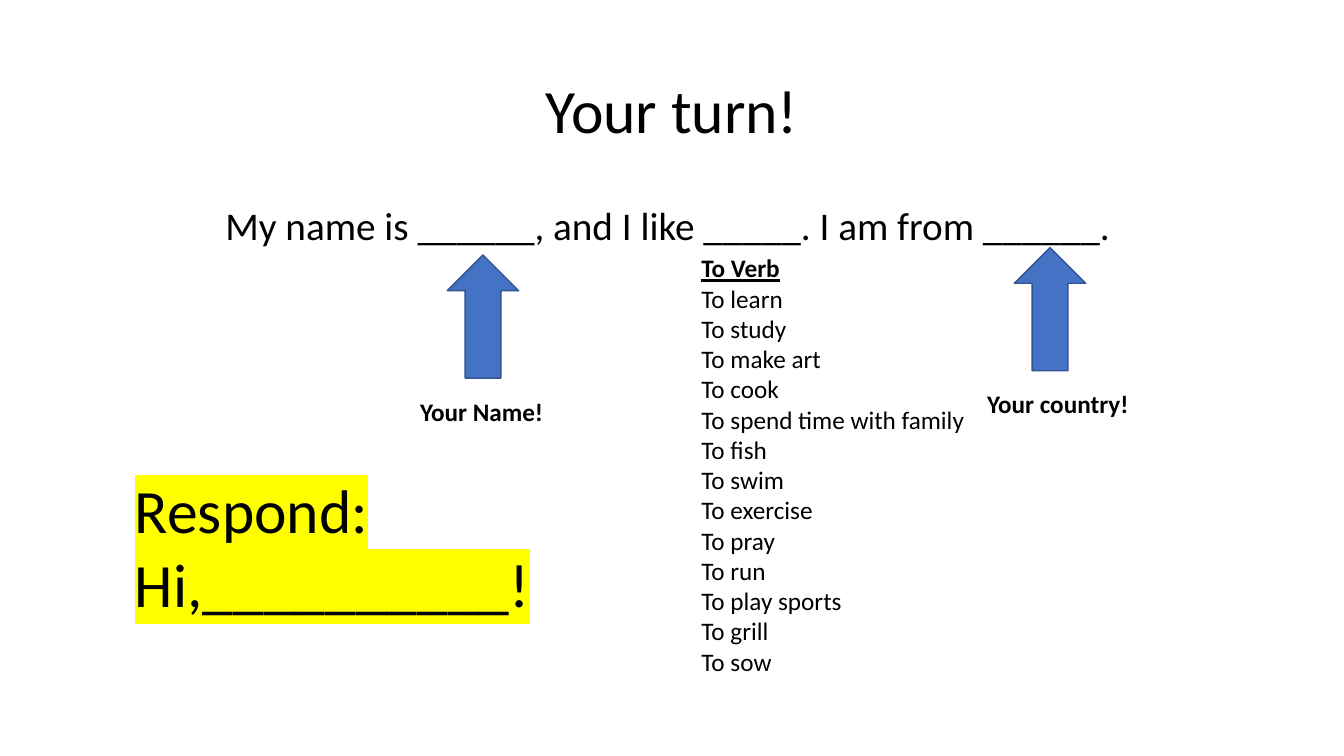
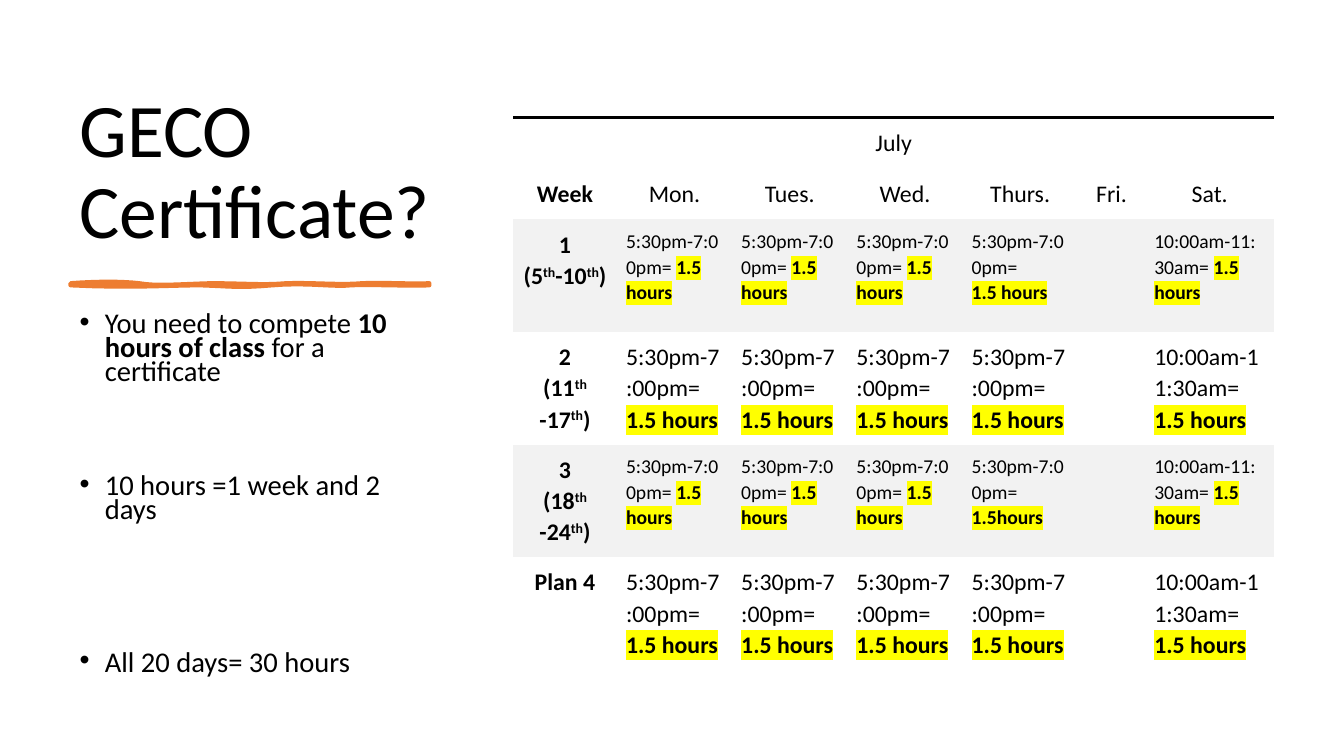
from lxml import etree
from pptx import Presentation
from pptx.dml.color import RGBColor
from pptx.enum import shapes, text
from pptx.oxml import ns
from pptx.util import Pt

COLORS = {"text": "000000", "mark": "FFFF00", "arrow": "4472C4",
          "arrow_edge": "325491", "stroke": "ED7D31", "band": "F2F2F2"}
FONT = "Calibri"
NO_GRID = "{2D5ABB26-0587-4C30-8999-92F81FD0307C}"
LEFT, CENTER = text.PP_ALIGN.LEFT, text.PP_ALIGN.CENTER
TOP, MIDDLE, BOTTOM = text.MSO_ANCHOR.TOP, text.MSO_ANCHOR.MIDDLE, text.MSO_ANCHOR.BOTTOM


def rgb(name):
    return RGBColor.from_string(COLORS[name])


def apply(target, values):
    for key, value in values.items():
        setattr(target, key, value)


def child(parent, tag, **attrs):
    return etree.SubElement(parent, ns.qn(tag), attrs)


class Deck:
    """Style, presentation and current slide, with one method per kind of element."""

    def __init__(self):
        self.prs = Presentation()
        apply(self.prs, {"slide_width": Pt(960), "slide_height": Pt(540)})
        self.s = None

    def slide(self):
        self.s = self.prs.slides.add_slide(self.prs.slide_layouts[1])

    def add_words(self, p, words, size, flags=""):
        r = p.add_run()
        r.text = words
        apply(r.font, {"name": FONT, "size": Pt(size), "bold": "b" in flags,
                       "underline": "u" in flags})
        r.font.color.rgb = rgb("text")
        rPr = r.font._element
        if "^" in flags:
            rPr.set("baseline", "30000")
        if "h" in flags:
            mark = child(rPr, "a:highlight")
            child(mark, "a:srgbClr", val=COLORS["mark"])
            rPr.find(ns.qn("a:latin")).addprevious(mark)

    def add_paragraphs(self, tf, paragraphs, size, **values):
        for i, runs in enumerate(paragraphs):
            p = tf.paragraphs[0] if i == 0 else tf.add_paragraph()
            apply(p, {"space_before": Pt(0), **values})
            for words, flags in runs:
                self.add_words(p, words, size, flags)
        return tf.paragraphs

    def placeholder(self, idx, box, anchor):
        sp = self.s.placeholders[idx]
        apply(sp, dict(zip(("left", "top", "width", "height"), map(Pt, box))))
        apply(sp.text_frame, {"vertical_anchor": anchor, "word_wrap": True,
                              "auto_size": text.MSO_AUTO_SIZE.NONE})
        return sp.text_frame

    def title(self, words, box, size, anchor=MIDDLE, align=CENTER):
        tf = self.placeholder(0, box, anchor)
        self.add_paragraphs(tf, [[(words, "")]], size, alignment=align, line_spacing=0.9)

    def body(self, paragraphs, box, size, gaps=None, **values):
        tf = self.placeholder(1, box, TOP)
        for i, p in enumerate(self.add_paragraphs(tf, paragraphs, size, **values)):
            pPr = p._p.get_or_add_pPr()
            indent = Pt(18) if gaps else 0
            pPr.set("marL", str(indent))
            pPr.set("indent", str(-indent))
            if gaps:
                p.space_before = Pt(gaps[i])
                child(pPr, "a:buFont", typeface="Arial")
                child(pPr, "a:buChar", char="•")
            else:
                child(pPr, "a:buNone")

    def label(self, paragraphs, box, size, wrap=False, parent=None):
        sp = (parent or self.s).shapes.add_textbox(*map(Pt, box))
        apply(sp.text_frame, {"word_wrap": wrap,
                              "auto_size": text.MSO_AUTO_SIZE.SHAPE_TO_FIT_TEXT})
        self.add_paragraphs(sp.text_frame, paragraphs, size)

    def paint(self, sp, fill, line, weight):
        sp.shadow.inherit = False
        sp.fill.solid()
        sp.fill.fore_color.rgb = rgb(fill)
        sp.line.color.rgb = rgb(line)
        sp.line.width = Pt(weight)

    def callout(self, words, x, y, width):
        group = self.s.shapes.add_group_shape()
        arrow = group.shapes.add_shape(shapes.MSO_SHAPE.RIGHT_ARROW,
                                       *map(Pt, (x, y, 88, 51)))
        arrow.rotation = 270
        self.paint(arrow, "arrow", "arrow_edge", 1)
        self.label([[(words, "b")]], (x - 8, y + 78.6, width, 29), 18, parent=group)

    def brush(self, start, curves):
        points, here = [], start
        for curve in curves:
            a, b, c, d = here, curve[:2], curve[2:4], curve[4:]
            for t in (n / 8 for n in range(1, 9)):
                u = 1 - t
                points.append(tuple(
                    Pt(u**3 * a[k] + 3 * u * u * t * b[k] + 3 * u * t * t * c[k] + t**3 * d[k])
                    for k in (0, 1)))
            here = d
        builder = self.s.shapes.build_freeform(*map(Pt, start))
        builder.add_line_segments(points, close=True)
        self.paint(builder.convert_to_shape(), "stroke", "stroke", 3)

    def table(self, rows, at, widths, heights):
        frame = self.s.shapes.add_table(len(heights), len(widths), *map(
            Pt, (*at, sum(widths), sum(heights))))
        table = frame.table
        apply(table, {"first_row": False, "horz_banding": False})
        table._tbl.tblPr.find(ns.qn("a:tableStyleId")).text = NO_GRID
        for column, width in zip(table.columns, widths):
            column.width = Pt(width)
        for row, height in zip(table.rows, heights):
            row.height = Pt(height)
        for r, (size, banded, cells) in enumerate(rows):
            for c, paragraphs in enumerate(cells):
                cell = table.cell(r, c)
                apply(cell, {f"margin_{side}": Pt(6.5)
                             for side in ("left", "right", "top", "bottom")})
                if banded:
                    cell.fill.solid()
                    cell.fill.fore_color.rgb = rgb("band")
                else:
                    cell.fill.background()
                if r == 0:
                    self.top_border(cell)
                self.add_paragraphs(cell.text_frame, paragraphs, 17 if c == 0 else size,
                                    alignment=CENTER if r < 2 or c == 0 else LEFT,
                                    line_spacing=1.07)
        table.cell(0, 0).merge(table.cell(0, len(widths) - 1))

    def top_border(self, cell):
        tcPr = cell._tc.get_or_add_tcPr()
        line = child(tcPr, "a:lnT", w=str(Pt(2.25)))
        child(child(line, "a:solidFill"), "a:srgbClr", val=COLORS["text"])
        tcPr.insert(0, line)


def your_turn(deck):
    deck.slide()
    deck.title("Your turn!", (66, 29, 828, 104), 44)
    deck.body([[("My name is ______, and I like _____. I am from ______. ", "")]],
              (66, 144, 828, 51), 28, alignment=CENTER, line_spacing=0.9)
    verbs = ("learn", "study", "make art", "cook", "spend time with family", "fish",
             "swim", "exercise", "pray", "run", "play sports", "grill", "sow")
    deck.label([[("To Verb", "bu")]] + [[(f"To {verb}", "")] for verb in verbs],
               (494, 177, 204.5, 312.5), 18)
    deck.callout("Your Name!", 301, 200.6, 103.7)
    deck.callout("Your country!", 706, 195.3, 116.6)
    deck.label([[("Respond: Hi,__________!", "h")]], (89.3, 333.4, 432.7, 113.8), 44, wrap=True)


def week(number, first, last, suffix="th"):
    return [[(number, "b")],
            [(first, "b"), (suffix, "b^"), (last, "b"), ("th", "b^"), (")", "b")]]


def session(time, hours="1.5 hours"):
    return [[(f"{time}= ", ""), (hours, "bh")]]


def certificate(deck):
    deck.slide()
    deck.title("GECO Certificate?", (49.7, 50.4, 270, 135.4), 54, BOTTOM, LEFT)
    deck.brush((50.4, 202.3), [
        (69.8, 200.9, 87.1, 200.9, 99.4, 202.3), (111.6, 204.5, 127.4, 203, 150.5, 202.3),
        (173.5, 202.3, 187.2, 203.8, 204.5, 202.3), (221.8, 201.6, 244.1, 203.8, 258.5, 202.3),
        (272.9, 201.6, 296.6, 203, 306.7, 202.3), (306.7, 203, 306.7, 203.8, 306.7, 203.8),
        (293.8, 204.5, 262.1, 203, 250.6, 203.8), (239, 205.2, 218.9, 201.6, 194.4, 203.8),
        (169.2, 205.9, 166.3, 204.5, 143.3, 203.8), (119.5, 203.8, 95, 205.9, 50.4, 203.8),
        (50.4, 203.8, 50.4, 203, 50.4, 202.3)])
    deck.body([[("You need to compete ", ""), ("10 hours of class ", "b"),
                ("for a certificate", "")],
               [("10 hours =1 week and 2 days", "")],
               [("All 20 days= 30 hours", "")]],
              (49.7, 221, 270, 268.6), 20.4, gaps=(0, 64.4, 91.6), line_spacing=0.7)
    evening, morning = session("5:30pm-7:00pm"), session("10:00am-11:30am")
    split = [[("5:30pm-7:00pm=", "")], [("1.5 hours", "bh")]]
    short = session("5:30pm-7:00pm", "1.5hours")
    days = ("Mon.", "Tues.", "Wed.", "Thurs.", "Fri.", "Sat.")
    plans = [(14, week("1", "(5", "-10"), split),
             (17, week("2", "(11", "-17", "th "), evening),
             (14, week("3", "(18", " -24"), short),
             (17, [[("Plan 4", "b")]], evening)]
    rows = [(17, False, [[[("July", "")]]] + [[]] * 6),
            (17, False, [[[("Week", "b")]]] + [[[(day, "")]] for day in days])]
    rows += [(size, size == 14, [name] + [evening] * 3 + [thursday, [], morning])
             for size, name, thursday in plans]
    deck.table(rows, (366.5, 84.2), [74.2] + [82.3] * 4 + [48.2, 92.2],
               [36.3] * 2 + [80.4] * 4)


def main():
    deck = Deck()
    your_turn(deck)
    certificate(deck)
    deck.prs.save("out.pptx")


if __name__ == "__main__":
    main()
